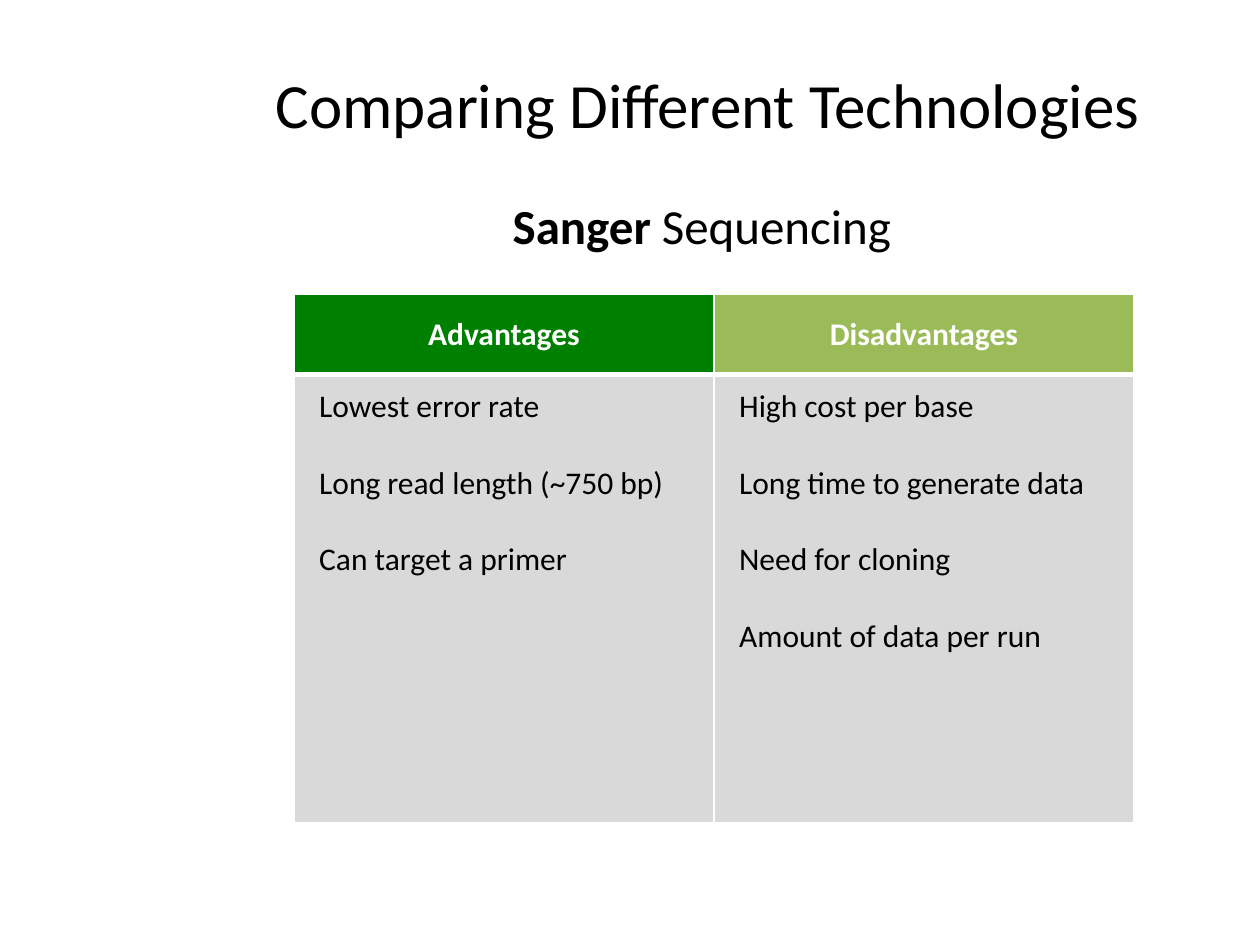
from lxml import etree
from pptx import Presentation
from pptx.dml.color import RGBColor
from pptx.enum.text import MSO_ANCHOR, PP_ALIGN
from pptx.oxml.ns import qn
from pptx.util import Pt

CENTER, LEFT = PP_ALIGN.CENTER, PP_ALIGN.LEFT
MIDDLE, TOP = MSO_ANCHOR.MIDDLE, MSO_ANCHOR.TOP
FONT = "Calibri"
TITLE_ONLY = 5
COLORS = {"text": "000000", "white": "FFFFFF", "green": "008000",
          "olive": "9BBB59", "grey": "D9D9D9"}
COLUMNS = [
    ("Advantages", "green",
     ["Lowest error rate", "Long read length (~750 bp)", "Can target a primer"]),
    ("Disadvantages", "olive",
     ["High cost per base", "Long time to generate data", "Need for cloning",
      "Amount of data per run"]),
]


def style_para(para, size, color="text", bold=False, align=CENTER):
    """Set the font and alignment of a paragraph."""
    para.alignment = align
    para.font.name = FONT
    para.font.size = Pt(size)
    para.font.bold = bold
    para.font.color.rgb = RGBColor.from_string(COLORS[color])


def place(shape, box):
    """Move a shape to a box of left, top, width and height in points."""
    shape.left, shape.top, shape.width, shape.height = map(Pt, box)


def add_title(page, box, text):
    """Fill and place the title placeholder."""
    title = page.shapes.title
    place(title, box)
    title.text_frame.text = text
    title.text_frame.vertical_anchor = MIDDLE
    style_para(title.text_frame.paragraphs[0], 36)


def add_subtitle(page, box, strong, rest):
    """Add a centred line that opens with bold words."""
    frame = page.shapes.add_textbox(*map(Pt, box)).text_frame
    frame.word_wrap = False
    para = frame.paragraphs[0]
    style_para(para, 28)
    for text, bold in ((strong, True), (rest, False)):
        span = para.add_run()
        span.text = text
        span.font.bold = bold


def set_borders(cell, bottom):
    """Draw white borders, 1 pt except for the given bottom width."""
    properties = cell._tc.get_or_add_tcPr()
    for index, (side, width) in enumerate(
            (("L", 1), ("R", 1), ("T", 1), ("B", bottom))):
        line = etree.Element(qn(f"a:ln{side}"), w=str(Pt(width)))
        fill = etree.SubElement(line, qn("a:solidFill"))
        etree.SubElement(fill, qn("a:srgbClr"), val=COLORS["white"])
        properties.insert(index, line)


def fill_cell(cell, fill, lines, anchor, bottom=1, **style):
    """Write lines into a filled cell, one line of space apart."""
    cell.fill.solid()
    cell.fill.fore_color.rgb = RGBColor.from_string(COLORS[fill])
    cell.vertical_anchor = anchor
    cell.text_frame.text = "\n".join(lines)
    for number, para in enumerate(cell.text_frame.paragraphs):
        style_para(para, 18, **style)
        if number:
            para.space_before = Pt(22)
    set_borders(cell, bottom)


def add_comparison(page, box, columns, header_height):
    """Add a table with one headed column for each list of points."""
    left, top, width, height = box
    table = page.shapes.add_table(2, len(columns), *map(Pt, box)).table
    table.rows[0].height = Pt(header_height)
    table.rows[1].height = Pt(height - header_height)
    for index, (heading, color, points) in enumerate(columns):
        table.columns[index].width = Pt(width / len(columns))
        fill_cell(table.cell(0, index), color, [heading], MIDDLE, bottom=3,
                  color="white", bold=True)
        body = table.cell(1, index)
        body.margin_left = body.margin_right = Pt(14.4)
        body.margin_top = body.margin_bottom = Pt(7.2)
        fill_cell(body, "grey", points, TOP, align=LEFT)


def main():
    """Build the slide and save the deck."""
    deck = Presentation()
    deck.slide_width, deck.slide_height = Pt(720), Pt(540)
    page = deck.slides.add_slide(deck.slide_layouts[TITLE_ONLY])
    add_title(page, (113, 28, 583, 62), "Comparing Different Technologies")
    add_comparison(page, (168, 168, 480, 302), COLUMNS, 46)
    add_subtitle(page, (280, 108, 242, 41), "Sanger", " Sequencing")
    deck.save("out.pptx")


if __name__ == "__main__":
    main()
